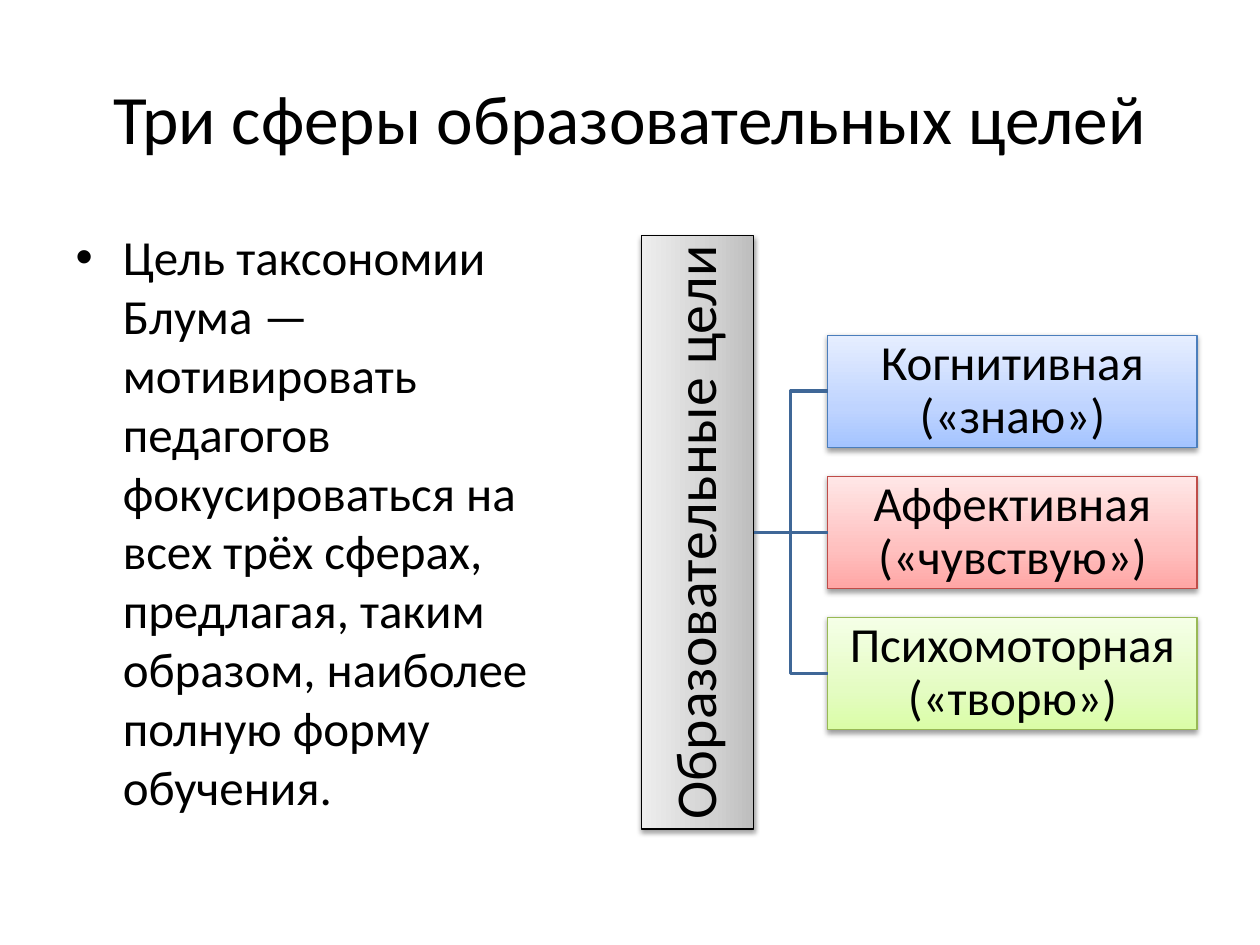
"""Builds the slide on the three domains of educational goals."""
from dataclasses import dataclass

from lxml import etree
from pptx import Presentation
from pptx.dml.color import RGBColor
from pptx.enum.shapes import MSO_CONNECTOR as Connector, MSO_SHAPE as Shape
from pptx.enum.text import MSO_ANCHOR as Anchor, MSO_AUTO_SIZE as AutoSize, PP_ALIGN as Align
from pptx.oxml import parse_xml
from pptx.oxml.ns import nsdecls, qn
from pptx.util import Pt

BLACK = RGBColor(0x00, 0x00, 0x00)
CONNECTOR_BLUE = RGBColor(0x3F, 0x67, 0x97)
BLUE_LINE = RGBColor(0x4B, 0x7E, 0xBC)
RED_LINE = RGBColor(0xBF, 0x4C, 0x48)
GREEN_LINE = RGBColor(0x98, 0xB9, 0x55)
GREYS = (RGBColor(0xBD, 0xBD, 0xBD), RGBColor(0xD1, 0xD1, 0xD1), RGBColor(0xEE, 0xEE, 0xEE))
BLUES = (RGBColor(0xA4, 0xC4, 0xFF), RGBColor(0xBF, 0xD4, 0xFF), RGBColor(0xE6, 0xEE, 0xFF))
REDS = (RGBColor(0xFF, 0xA6, 0xA5), RGBColor(0xFF, 0xC0, 0xBF), RGBColor(0xFF, 0xE7, 0xE7))
GREENS = (RGBColor(0xDA, 0xFD, 0xA7), RGBColor(0xE4, 0xFC, 0xC2), RGBColor(0xF5, 0xFF, 0xE7))

FONT = "Calibri"
MIDDLE = 304.2
THICKNESS = 64.1
ROOT_LEFT, ROOT_HEIGHT = 366.5, 339.1
DOMAIN_LEFT, DOMAIN_WIDTH, DOMAIN_PITCH = 473, 211, 80.6
LEFT_SIDE, RIGHT_SIDE = 1, 3


@dataclass(frozen=True)
class Box:
    text: str
    left: float
    center: float
    width: float
    height: float
    shades: tuple[RGBColor, ...]
    line: RGBColor
    size: float = 28
    vertical: bool = False


def write_text(shape, text: str, *, size: float, align=None, anchor=None,
               spacing: float | None = None, inset: float | None = None) -> None:
    """Put formatted text into a shape or placeholder."""
    frame = shape.text_frame
    frame.word_wrap = True
    frame.auto_size = AutoSize.NONE
    if anchor is not None:
        frame.vertical_anchor = anchor
    if inset is not None:
        frame.margin_left = frame.margin_right = Pt(inset)
        frame.margin_top = frame.margin_bottom = Pt(inset)
    paragraph = frame.paragraphs[0]
    paragraph.alignment = align
    paragraph.line_spacing = spacing
    run = paragraph.add_run()
    run.text = text
    run.font.name = FONT
    run.font.size = Pt(size)
    run.font.color.rgb = BLACK


def place(shape, left: float, top: float, width: float, height: float) -> None:
    """Move and size a shape in points."""
    shape.left, shape.top = Pt(left), Pt(top)
    shape.width, shape.height = Pt(width), Pt(height)


def set_gradient(shape, shades: tuple[RGBColor, ...], angle: int) -> None:
    """Fill a shape with a three-stop linear gradient."""
    stops = "".join(
        f'<a:gs pos="{position * 1000}"><a:srgbClr val="{shade}"/></a:gs>'
        for position, shade in zip((0, 35, 100), shades)
    )
    gradient = parse_xml(
        f'<a:gradFill {nsdecls("a")} rotWithShape="1"><a:gsLst>{stops}</a:gsLst>'
        f'<a:lin ang="{angle * 60000}" scaled="0"/></a:gradFill>'
    )
    shape._element.spPr.find(qn("a:prstGeom")).addnext(gradient)


def set_shadow(shape) -> None:
    """Give a shape a soft shadow that falls straight down."""
    shape.shadow.inherit = False
    effects = shape._element.spPr.find(qn("a:effectLst"))
    effects.append(parse_xml(
        f'<a:outerShdw {nsdecls("a")} blurRad="{Pt(3.1)}" dist="{Pt(1.6)}" dir="5400000" '
        'rotWithShape="0"><a:srgbClr val="000000"><a:alpha val="38000"/></a:srgbClr></a:outerShdw>'
    ))


def draw_box(slide, box: Box):
    """Draw one labelled box of the hierarchy."""
    top = box.center - box.height / 2
    shape = slide.shapes.add_shape(
        Shape.RECTANGLE, Pt(box.left), Pt(top), Pt(box.width), Pt(box.height))
    set_gradient(shape, box.shades, 180 if box.vertical else 270)
    shape.line.color.rgb = box.line
    shape.line.width = Pt(0.75)
    set_shadow(shape)
    write_text(shape, box.text, size=box.size, align=Align.CENTER, anchor=Anchor.MIDDLE,
               spacing=0.9, inset=1.4)
    if box.vertical:
        shape.text_frame._txBody.bodyPr.set("vert", "vert270")
    return shape


def join(slide, root, domain, kind: Connector) -> None:
    """Connect the root box to a domain box."""
    connector = slide.shapes.add_connector(kind, 0, 0, 0, 0)
    connector.begin_connect(root, RIGHT_SIDE)
    connector.end_connect(domain, LEFT_SIDE)
    connector.line.color.rgb = CONNECTOR_BLUE
    connector.line.width = Pt(2)
    etree.SubElement(connector._element.spPr, qn("a:effectLst"))


def main() -> None:
    """Build and save the presentation."""
    presentation = Presentation()
    presentation.slide_width, presentation.slide_height = Pt(720), Pt(540)
    slide = presentation.slides.add_slide(presentation.slide_layouts[1])

    title, body = slide.placeholders
    place(title, 36, 21.6, 648, 90)
    write_text(title, "Три сферы образовательных целей", size=39.6,
               align=Align.CENTER, anchor=Anchor.MIDDLE)
    place(body, 36, 126, 318, 356.4)
    write_text(body, "Цель таксономии Блума — мотивировать педагогов фокусироваться на всех "
               "трёх сферах, предлагая, таким образом, наиболее полную форму обучения.", size=28)

    root = draw_box(slide, Box("Образовательные цели", ROOT_LEFT, MIDDLE, THICKNESS, ROOT_HEIGHT,
                               GREYS, BLACK, size=33, vertical=True))
    domains = (
        ("Когнитивная («знаю»)", BLUES, BLUE_LINE, Connector.ELBOW),
        ("Аффективная («чувствую»)", REDS, RED_LINE, Connector.STRAIGHT),
        ("Психомоторная («творю»)", GREENS, GREEN_LINE, Connector.ELBOW),
    )
    for row, (text, shades, line, kind) in enumerate(domains, start=-1):
        domain = draw_box(slide, Box(text, DOMAIN_LEFT, MIDDLE + row * DOMAIN_PITCH,
                                     DOMAIN_WIDTH, THICKNESS, shades, line))
        join(slide, root, domain, kind)

    presentation.save("out.pptx")


if __name__ == "__main__":
    main()
